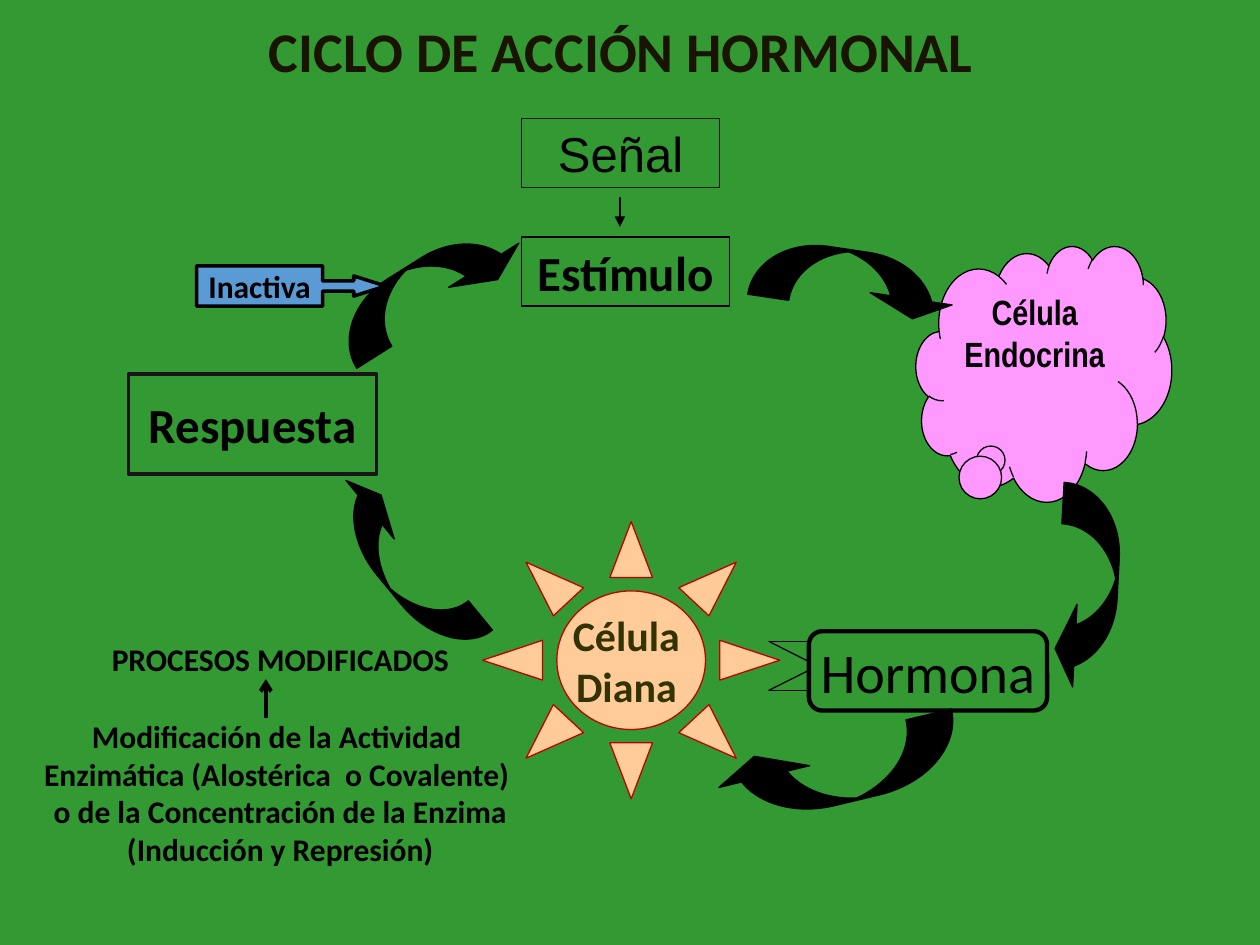
"""Build the slide on the cycle of hormonal action."""
from dataclasses import dataclass
from typing import Optional

from lxml import etree
from pptx import Presentation
from pptx.dml.color import RGBColor
from pptx.enum import shapes as kinds, text as ent
from pptx.oxml.ns import qn
from pptx.util import Inches, Pt

Kind = kinds.MSO_SHAPE


@dataclass(frozen=True)
class Theme:
    back: str = "339933"
    title: str = "1A1300"
    ink: str = "000000"
    edge: str = "181717"
    pink: str = "FF99FF"
    peach: str = "FFCC99"
    red: str = "C00000"
    olive: str = "333300"
    blue: str = "5B9BD5"
    face: str = "Calibri"
    plain: str = "Arial"
    narrow: str = "Arial Narrow"
    small: int = 18
    cell: int = 20
    target: int = 24
    label: int = 28
    large: int = 32
    thin: float = 0.75


THEME = Theme()


@dataclass(frozen=True)
class Node:
    kind: Kind
    box: tuple
    words: str = ""
    fill: Optional[str] = None
    line: str = THEME.ink
    width: float = THEME.thin
    adj: tuple = ()
    turn: float = 0
    size: int = THEME.label
    face: str = THEME.face
    color: str = THEME.ink
    bold: bool = True
    wrap: bool = False
    top: bool = False


@dataclass(frozen=True)
class Link:
    start: tuple
    end: tuple
    width: float = THEME.thin
    head: str = ""


def bend(left: float, top: float, wide: float, high: float, turn: float) -> Node:
    """Describe one curved arrow of the cycle."""
    return Node(Kind.CURVED_DOWN_ARROW, (left, top, wide, high),
                fill=THEME.ink, adj=(0.7, 1.4, 0.33), turn=turn)


SIGNAL = Node(Kind.RECTANGLE, (4.14, 0.94, 1.57, 0.55), "Señal",
              line=THEME.edge, face=THEME.plain, bold=False)
CUE = Link((4.92, 1.56), (4.92, 1.8), head="triangle")
STEPS = (
    Node(Kind.RECTANGLE, (4.14, 1.88, 1.65, 0.55), "Estímulo"),
    Node(Kind.CLOUD_CALLOUT, (7.27, 1.95, 2.03, 2.03), "Célula Endocrina",
         fill=THEME.pink, adj=(-0.195, 0.319), size=THEME.cell,
         face=THEME.narrow, wrap=True, top=True),
    Node(Kind.ROUNDED_RECTANGLE, (6.42, 5.01, 1.89, 0.63), "Hormona",
         width=2.5, adj=(0.167,), size=THEME.large, bold=False),
    Node(Kind.SUN, (3.83, 4.14, 2.36, 2.2), "Célula \nDiana ", fill=THEME.peach,
         line=THEME.red, adj=(0.25,), size=THEME.target, color=THEME.olive),
)
TAIL = (
    Link((6.42, 5.25), (6.1, 5.09)),
    Link((6.42, 5.32), (6.1, 5.48)),
    Link((6.1, 5.48), (6.42, 5.48)),
    Link((6.1, 5.09), (6.42, 5.09)),
)
REPLY = Node(Kind.RECTANGLE, (1.02, 2.97, 1.97, 0.79), "Respuesta",
             line=THEME.edge, width=2)
BENDS = (
    bend(5.96, 1.99, 1.65, 0.47, 8.5),
    bend(7.81, 4.43, 1.65, 0.47, 93.1),
    bend(5.66, 5.85, 1.98, 0.53, 166.5),
    bend(2.36, 4.27, 1.69, 0.43, 230.5),
    bend(2.58, 2.05, 1.65, 0.47, 327.8),
)
STOP = Node(Kind.LEFT_ARROW_CALLOUT, (1.56, 2.11, 1.5, 0.32), "Inactiva",
            fill=THEME.blue, width=2, adj=(0.25, 0.25, 0.789, 0.667),
            turn=180, size=THEME.small)
RISE = Link((2.11, 5.7), (2.11, 5.39), width=2.25, head="arrow")
NOTES = """PROCESOS MODIFICADOS
Modificación de la Actividad 
Enzimática (Alostérica  o Covalente) 
o de la Concentración de la Enzima
(Inducción y Represión)"""


def tint(code: str) -> RGBColor:
    """Turn a hex code into a colour."""
    return RGBColor.from_string(code)


def write(frame, words: str, *, size: int = THEME.label, face: str = THEME.face,
          color: str = THEME.ink, bold: bool = True, wrap: bool = False,
          top: bool = False) -> None:
    """Fill a text frame with centred paragraphs."""
    frame.word_wrap = wrap
    frame.auto_size = ent.MSO_AUTO_SIZE.NONE
    frame.vertical_anchor = ent.MSO_ANCHOR.TOP if top else ent.MSO_ANCHOR.MIDDLE
    frame.text = words
    for para in frame.paragraphs:
        para.alignment = ent.PP_ALIGN.CENTER
        for run in para.runs:
            font = run.font
            font.name, font.size, font.bold = face, Pt(size), bold
            font.color.rgb = tint(color)


def draw(slide, node: Node) -> None:
    """Draw one shape with its text."""
    shape = slide.shapes.add_shape(node.kind, *map(Inches, node.box))
    shape.shadow.inherit = False
    shape.rotation = node.turn
    for i, value in enumerate(node.adj):
        shape.adjustments[i] = value
    if node.fill:
        shape.fill.solid()
        shape.fill.fore_color.rgb = tint(node.fill)
    else:
        shape.fill.background()
    shape.line.color.rgb = tint(node.line)
    shape.line.width = Pt(node.width)
    if node.words:
        write(shape.text_frame, node.words, size=node.size, face=node.face,
              color=node.color, bold=node.bold, wrap=node.wrap, top=node.top)
        if node.turn:
            body = shape.text_frame._txBody.find(qn("a:bodyPr"))
            body.set("rot", str(int(node.turn * 60000)))


def join(slide, link: Link) -> None:
    """Draw one straight line or arrow."""
    line = slide.shapes.add_connector(
        kinds.MSO_CONNECTOR.STRAIGHT, *map(Inches, link.start + link.end))
    line.line.color.rgb = tint(THEME.ink)
    line.line.width = Pt(link.width)
    if link.head:
        etree.SubElement(line.line._get_or_add_ln(), qn("a:tailEnd"), type=link.head)
    etree.SubElement(line._element.spPr, qn("a:effectLst"))


def main() -> None:
    """Build and save the slide."""
    deck = Presentation()
    deck.slide_width, deck.slide_height = Inches(10), Inches(7.5)
    slide = deck.slides.add_slide(deck.slide_layouts[5])
    slide.background.fill.solid()
    slide.background.fill.fore_color.rgb = tint(THEME.back)

    title = slide.shapes.title
    title.left, title.top, title.width, title.height = map(Inches, (0.43, 0, 9, 0.86))
    write(title.text_frame, "CICLO DE ACCIÓN HORMONAL", size=THEME.large,
          color=THEME.title, wrap=True)
    title.text_frame.paragraphs[0].line_spacing = 0.9

    draw(slide, SIGNAL)
    join(slide, CUE)
    for node in STEPS:
        draw(slide, node)
    for link in TAIL:
        join(slide, link)
    notes = slide.shapes.add_textbox(*map(Inches, (0, 5.04, 4.45, 1.89)))
    write(notes.text_frame, NOTES, size=THEME.small)
    notes.text_frame.paragraphs[1].space_before = Pt(22)
    for node in (REPLY, *BENDS, STOP):
        draw(slide, node)
    join(slide, RISE)
    deck.save("out.pptx")


if __name__ == "__main__":
    main()
